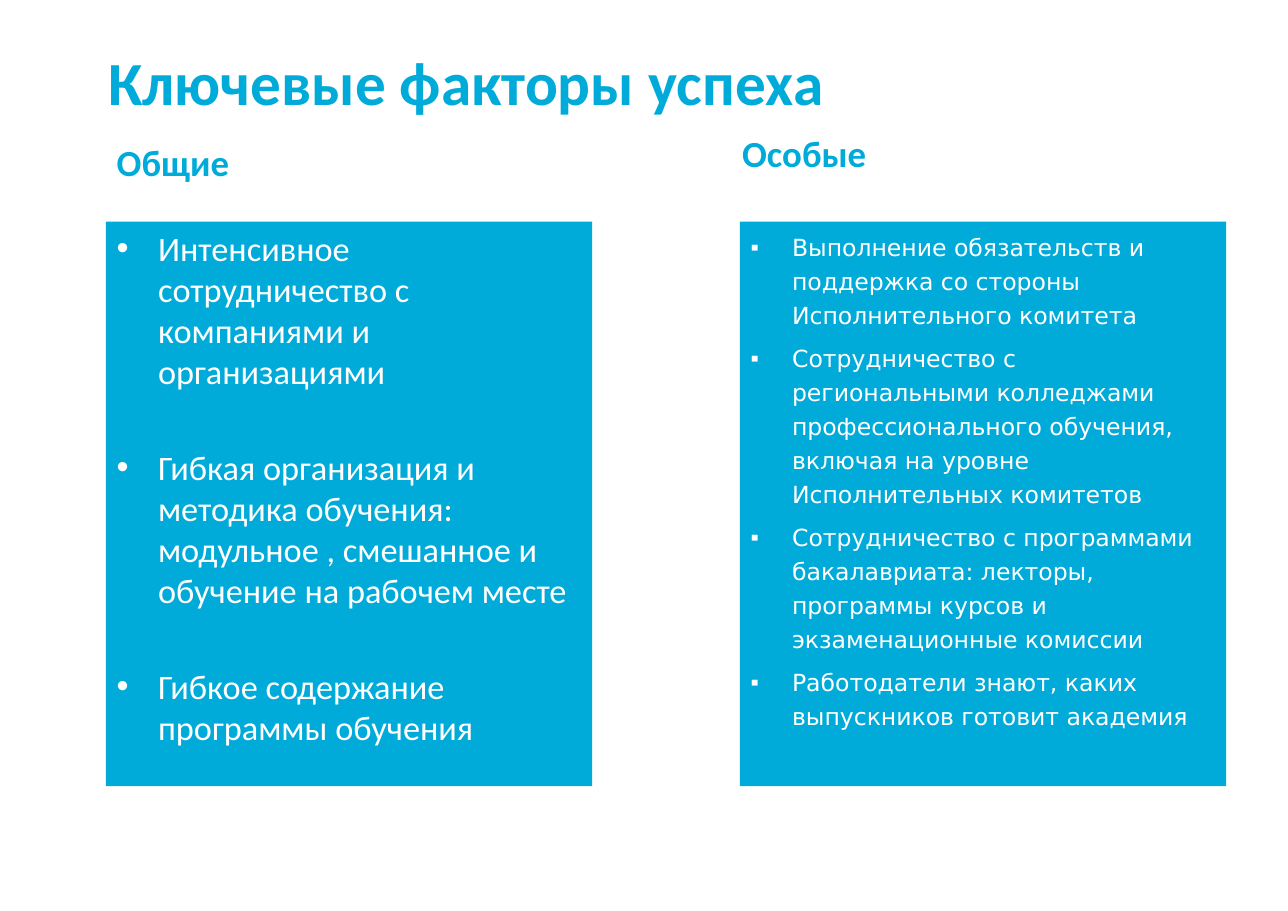
from dataclasses import dataclass

from lxml.etree import SubElement
from pptx import Presentation
from pptx.dml.color import RGBColor
from pptx.enum.shapes import MSO_SHAPE as Shape
from pptx.enum.text import MSO_ANCHOR as Anchor, MSO_AUTO_SIZE as AutoSize, PP_ALIGN as Align
from pptx.oxml.ns import qn
from pptx.util import Pt


@dataclass(frozen=True)
class Theme:
    blue = RGBColor(0x00, 0xAB, 0xD9)
    white = RGBColor(0xFF, 0xFF, 0xFF)
    main_font = "Calibri"
    detail_font = "DejaVu Sans"
    title_size = 40
    heading_size = 24
    common_size = 22.4
    special_size = 15.4


theme = Theme()


def write_heading(box, text, size):
    frame = box.text_frame
    frame.word_wrap = True
    frame.auto_size = AutoSize.NONE
    frame.vertical_anchor = Anchor.TOP
    frame.text = text
    para = frame.paragraphs[0]
    para.alignment = Align.LEFT
    para.font.name, para.font.size, para.font.bold = theme.main_font, Pt(size), True
    para.font.color.rgb = theme.blue


def add_bullet(para, symbol, indent):
    properties = para._p.get_or_add_pPr()
    properties.set("marL", str(Pt(indent)))
    properties.set("indent", str(Pt(-indent)))
    SubElement(properties, qn("a:buFont")).set("typeface", "Arial")
    SubElement(properties, qn("a:buChar")).set("char", symbol)


deck = Presentation()
deck.slide_width, deck.slide_height = Pt(841), Pt(594.7)
page = deck.slides.add_slide(deck.slide_layouts[5])

# Title
title = page.shapes.title
title.left, title.top, title.width, title.height = Pt(63.4), Pt(25.2), Pt(753.8), Pt(55.4)
write_heading(title, "Ключевые факторы успеха", theme.title_size)

# Column headings
for text, left, top, width in [("Общие", 69.1, 87.8, 226.8), ("Особые", 477.4, 82.1, 164.2)]:
    heading = page.shapes.add_textbox(Pt(left), Pt(top), Pt(width), Pt(36))
    write_heading(heading, text, theme.heading_size)

# Panels: left, font, size, bullet, line spacing, space before, space after, items
panels = [
    (69.1, theme.main_font, theme.common_size, "•", 1.0, 35.5, 0, [
        "Интенсивное сотрудничество с компаниями и организациями",
        "Гибкая организация и методика обучения: модульное , смешанное и обучение на рабочем месте",
        "Гибкое содержание программы обучения",
    ]),
    (483.1, theme.detail_font, theme.special_size, "▪", 1.2, 3.1, 3, [
        "Выполнение обязательств и поддержка со стороны Исполнительного комитета",
        "Сотрудничество с региональными колледжами профессионального обучения, "
        "включая на уровне Исполнительных комитетов",
        "Сотрудничество с программами бакалавриата: лекторы, программы курсов "
        "и экзаменационные комиссии",
        "Работодатели знают, каких выпускников готовит академия",
    ]),
]
for left, font, size, bullet, line_spacing, before, after, items in panels:
    panel = page.shapes.add_shape(Shape.RECTANGLE, Pt(left), Pt(144.7), Pt(317.5), Pt(368.6))
    panel.shadow.inherit = False
    panel.fill.solid()
    panel.fill.fore_color.rgb = theme.blue
    panel.line.fill.background()
    frame = panel.text_frame
    frame.word_wrap = True
    frame.vertical_anchor = Anchor.TOP
    for number, item in enumerate(items):
        para = frame.add_paragraph() if number else frame.paragraphs[0]
        para.text = item
        para.alignment = Align.LEFT
        para.line_spacing = line_spacing
        para.space_before = Pt(before if number else 0)
        para.space_after = Pt(after)
        add_bullet(para, bullet, 27)
        para.font.name, para.font.size = font, Pt(size)
        para.font.color.rgb = theme.white

deck.save("out.pptx")
